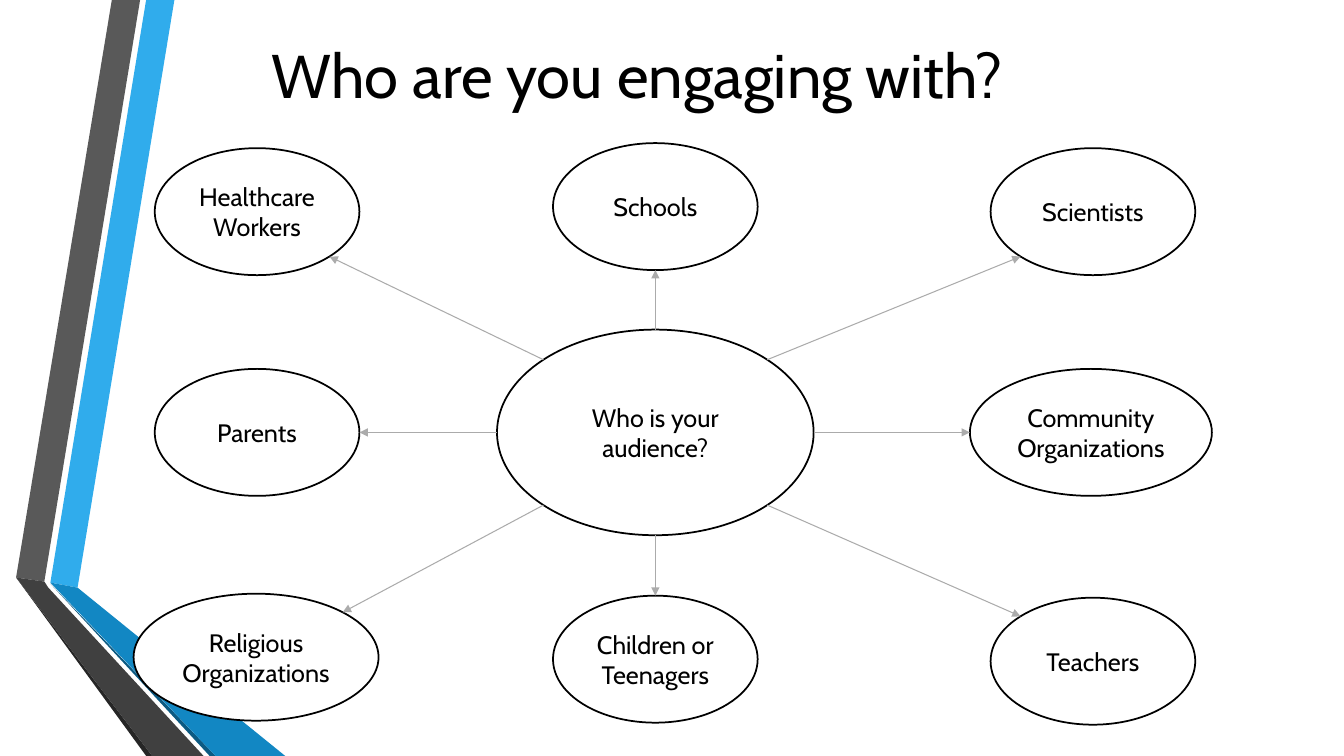
import math

import pptx
import pptx.util
from lxml import etree
from pptx.dml.color import RGBColor
from pptx.enum.shapes import MSO_CONNECTOR, MSO_SHAPE
from pptx.enum.text import MSO_ANCHOR, MSO_AUTO_SIZE, PP_ALIGN
from pptx.oxml.ns import qn
from pptx.util import Inches

BLACK = RGBColor(0x00, 0x00, 0x00)
WHITE = RGBColor(0xFF, 0xFF, 0xFF)
ARROW = RGBColor(0xAB, 0xAB, 0xAB)
SKY = RGBColor(0x30, 0xAC, 0xEC)
BLUE = RGBColor(0x12, 0x87, 0xC3)
NAVY = RGBColor(0x0C, 0x5A, 0x82)
GREY = RGBColor(0x59, 0x59, 0x59)
DARK = RGBColor(0x40, 0x40, 0x40)
COAL = RGBColor(0x26, 0x26, 0x26)

# Folded ribbons on the left edge, back to front
BANDS = [
    (SKY, [(0.5, 5.78), (0.77, 5.83), (1.73, 0), (1.45, 0)]),
    (GREY, [(1.39, 0), (1.11, 0), (0.16, 5.73), (0.44, 5.77)]),
    (COAL, [(0.16, 5.73), (1.45, 7.5), (1.51, 7.5)]),
    (NAVY, [(0.5, 5.79), (2.08, 7.5), (2.14, 7.5)]),
    (BLUE, [(0.5, 5.78), (2.14, 7.5), (2.83, 7.5), (0.77, 5.83)]),
    (DARK, [(0.16, 5.73), (1.51, 7.5), (2.02, 7.5), (0.48, 5.83),
            (0.44, 5.77)]),
]

# Centre and size of the hub, then of each group around it.
# The angle is where the arrow leaves the hub, clockwise from the right.
HUB = (6.5, 4.29, 3.14, 2.04)
HIGH = 1.26
GROUPS = [
    ("Community Organizations", 0, 10.82, 4.29, 2.4),
    ("Teachers", 45, 10.84, 6.56, 2.03),
    ("Children or Teenagers", 90, 6.5, 6.54, 2.03),
    ("Religious Organizations", 135, 2.54, 6.52, 2.43),
    ("Parents", 180, 2.55, 4.29, 2.03),
    ("Healthcare Workers", 225, 2.55, 2.1, 2.03),
    ("Schools", 270, 6.5, 2.05, 2.03),
    ("Scientists", 315, 10.84, 2.1, 2.03),
]


def rim(oval, angle):
    """Return the point of an oval's outline at an angle in degrees."""
    x, y, wide, high = oval
    turn = math.radians(angle)
    return x + wide / 2 * math.cos(turn), y + high / 2 * math.sin(turn)


class Deck:
    font = "Cabin"

    def __init__(self):
        self.show = pptx.Presentation()
        self.show.slide_width = Inches(13.33)
        self.show.slide_height = Inches(7.5)
        self.slide = self.show.slides.add_slide(self.show.slide_layouts[5])
        self.shapes = self.slide.shapes

    def label(self, frame, text, size):
        frame.text = text
        frame.word_wrap = True
        frame.vertical_anchor = MSO_ANCHOR.MIDDLE
        line = frame.paragraphs[0]
        line.alignment = PP_ALIGN.CENTER
        font = line.runs[0].font
        font.name = self.font
        font.size = pptx.util.Pt(size)
        font.color.rgb = BLACK

    def title(self, text, left, top, wide, high):
        box = self.shapes.title
        box.left, box.top = Inches(left), Inches(top)
        box.width, box.height = Inches(wide), Inches(high)
        self.label(box.text_frame, text, 44)
        box.text_frame.auto_size = MSO_AUTO_SIZE.NONE

    def band(self, color, points):
        spots = [(Inches(x), Inches(y)) for x, y in points]
        pen = self.shapes.build_freeform(*spots[0])
        pen.add_line_segments(spots[1:], close=True)
        shape = pen.convert_to_shape()
        shape.shadow.inherit = False
        shape.fill.solid()
        shape.fill.fore_color.rgb = color
        shape.line.fill.background()

    def oval(self, text, x, y, wide, high):
        shape = self.shapes.add_shape(
            MSO_SHAPE.OVAL, Inches(x - wide / 2), Inches(y - high / 2),
            Inches(wide), Inches(high))
        shape.shadow.inherit = False
        shape.fill.solid()
        shape.fill.fore_color.rgb = WHITE
        shape.line.color.rgb = BLACK
        shape.line.width = pptx.util.Pt(1.25)
        self.label(shape.text_frame, text, 18)

    def arrow(self, start, end):
        link = self.shapes.add_connector(
            MSO_CONNECTOR.STRAIGHT, *map(Inches, start + end))
        link.line.color.rgb = ARROW
        link.line.width = pptx.util.Pt(0.75)
        props = link.element.spPr
        etree.SubElement(props.find(qn("a:ln")), qn("a:tailEnd"),
                         type="triangle")
        etree.SubElement(props, qn("a:effectLst"))


def main():
    deck = Deck()
    for color, points in BANDS:
        deck.band(color, points)
    deck.title("Who are you engaging with?", 2.52, 0.31, 7.61, 0.84)
    deck.oval("Who is your audience?", *HUB)
    for text, angle, x, y, wide in GROUPS:
        group = (x, y, wide, HIGH)
        deck.oval(text, *group)
        deck.arrow(rim(HUB, angle), rim(group, angle + 180))
    deck.show.save("out.pptx")


if __name__ == "__main__":
    main()
